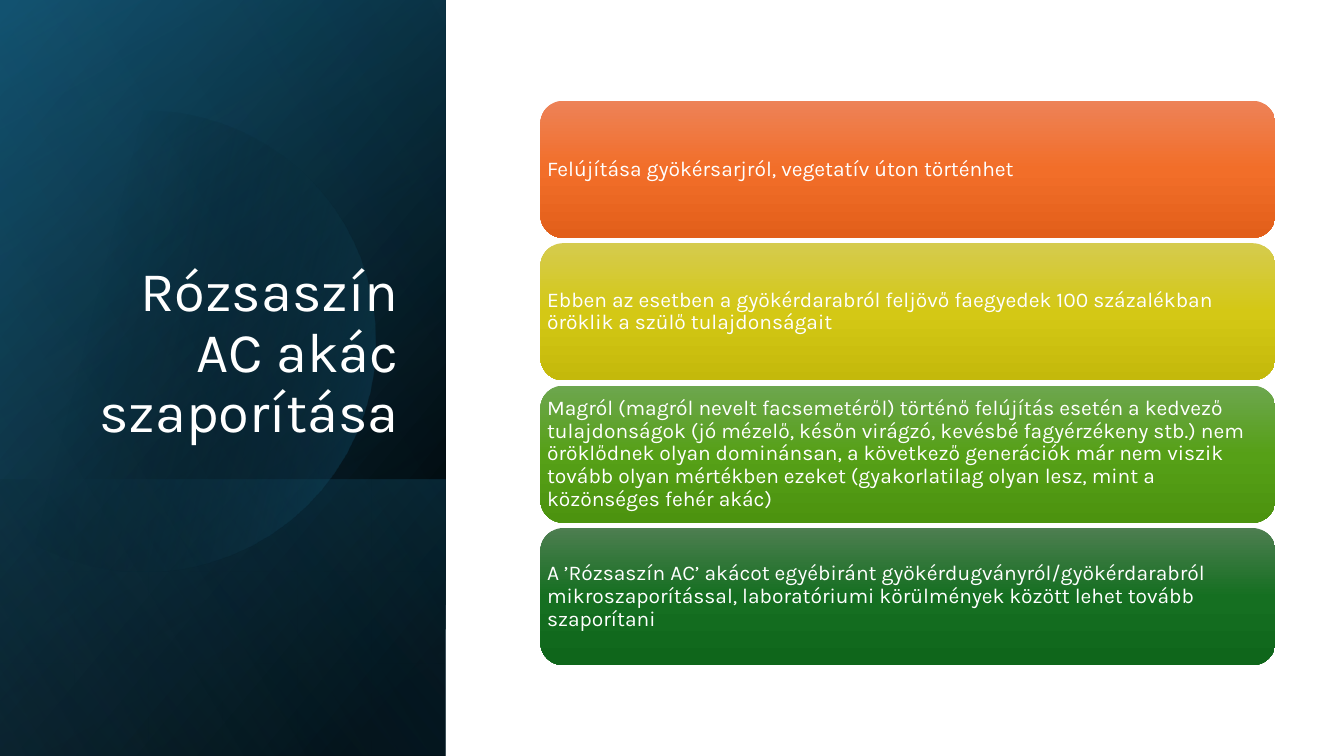
"""Builds a slide on propagating the pink black locust: a dark title panel and four cards."""
from lxml import etree
from pptx import Presentation
from pptx import util as u
from pptx.dml.color import RGBColor
from pptx.enum import shapes, text
from pptx.oxml.ns import qn

TITLE = "Rózsaszín AC akác szaporítása"
CARDS = [
    ("Felújítása gyökérsarjról, vegetatív úton történhet",
     ("ED8257", "F26E29", "E25F1A")),
    ("Ebben az esetben a gyökérdarabról feljövő faegyedek 100 százalékban öröklik a szülő "
     "tulajdonságait",
     ("D5CB4E", "D4C815", "C4B90B")),
    ("Magról (magról nevelt facsemetéről) történő felújítás esetén a kedvező tulajdonságok "
     "(jó mézelő, későn virágzó, kevésbé fagyérzékeny stb.) nem öröklődnek olyan dominánsan, "
     "a következő generációk már nem viszik tovább olyan mértékben ezeket (gyakorlatilag "
     "olyan lesz, mint a közönséges fehér akác)",
     ("6DA64E", "56A017", "4C930F")),
    ("A ’Rózsaszín AC’ akácot egyébiránt gyökérdugványról/gyökérdarabról "
     "mikroszaporítással, laboratóriumi körülmények között lehet tovább szaporítani",
     ("4D7E50", "156F21", "0F661B")),
]
CARD_LEFT, CARD_TOP, CARD_WIDTH, CARD_HEIGHT, CARD_PITCH = 5.36, 1, 7.29, 1.36, 1.413

FULL_PANEL = (-1.54, 1.54, 7.5, 4.42)
LOWER_PANEL = (0.84, 3.92, 2.74, 4.42)
PANELS_BELOW = [
    (FULL_PANEL, 50, [(8, "000000", 100), (100, "104862", 100)]),
    (FULL_PANEL, 30, [(0, "000000", 0), (99, "156082", 46)]),
    (LOWER_PANEL, 130, [(2, "156082", 29), (100, "000000", 30)]),
]
PANELS_ABOVE = [(FULL_PANEL, 120, [(0, "000000", 0), (99, "46B1E1", 11)])]

DISC_START = (1.49, 1.1)
DISC_CURVES = [
    ((2.46, 1.12), (3.35, 1.77), (3.63, 2.75)),
    ((3.98, 3.97), (3.28, 5.23), (2.07, 5.58)),
    ((1.31, 5.8), (0.53, 5.61), (-0.03, 5.14)),
    ((-0.03, 5.14), (0, 1.61), (0, 1.61)),
    ((0.23, 1.42), (0.5, 1.28), (0.8, 1.19)),
    ((1.03, 1.13), (1.26, 1.1), (1.49, 1.1)),
]
DISC_STOPS = [(29, "000000", 0), (100, "156082", 43)]


def color(value):
    return RGBColor.from_string(value)


def fill_gradient(shape, stops, angle):
    shape.shadow.inherit = False
    shape.line.fill.background()
    shape.fill.gradient()
    gradient = shape.fill._xPr.find(qn("a:gradFill"))
    for child in list(gradient):
        gradient.remove(child)
    stop_list = etree.SubElement(gradient, qn("a:gsLst"))
    for position, value, opacity in stops:
        stop = etree.SubElement(stop_list, qn("a:gs"), pos=str(position * 1000))
        tint = etree.SubElement(stop, qn("a:srgbClr"), val=value)
        if opacity < 100:
            etree.SubElement(tint, qn("a:alpha"), val=str(opacity * 1000))
    etree.SubElement(gradient, qn("a:lin"), ang=str(angle * 60000), scaled="0")
    gradient.set("rotWithShape", "1")


def write(shape, words, size, align, anchor, insets):
    frame = shape.text_frame
    frame.word_wrap = True
    frame.vertical_anchor = anchor
    frame.margin_left = frame.margin_right = u.Inches(insets[0])
    frame.margin_top = frame.margin_bottom = u.Inches(insets[1])
    para = frame.paragraphs[0]
    para.alignment = align
    para.line_spacing = 0.9
    span = para.add_run()
    span.text = words
    span.font.size = u.Pt(size)
    span.font.name = "Karla"
    span.font.color.rgb = color("FFFFFF")


def add_panels(page, panels):
    for place, angle, stops in panels:
        panel = page.shapes.add_shape(shapes.MSO_SHAPE.RECTANGLE, *map(u.Inches, place))
        panel.rotation = 90
        panel._element.spPr.find(qn("a:xfrm")).set("flipH", "1")
        fill_gradient(panel, stops, angle)


def curve_points(start, curves, steps=16):
    points = []
    for first, second, end in curves:
        for step in range(1, steps + 1):
            t = step / steps
            weights = ((1 - t) ** 3, 3 * t * (1 - t) ** 2, 3 * t * t * (1 - t), t ** 3)
            corners = (start, first, second, end)
            x, y = (sum(w * c[axis] for w, c in zip(weights, corners)) for axis in (0, 1))
            points.append((u.Inches(max(0, x)), u.Inches(y)))
        start = end
    return points


def add_disc(page):
    builder = page.shapes.build_freeform(*map(u.Inches, DISC_START))
    builder.add_line_segments(curve_points(DISC_START, DISC_CURVES), close=True)
    fill_gradient(builder.convert_to_shape(), DISC_STOPS, 14)


def add_cards(page):
    for index, (words, shades) in enumerate(CARDS):
        place = (CARD_LEFT, CARD_TOP + index * CARD_PITCH, CARD_WIDTH, CARD_HEIGHT)
        card = page.shapes.add_shape(shapes.MSO_SHAPE.ROUNDED_RECTANGLE, *map(u.Inches, place))
        fill_gradient(card, [(i * 50, shade, 100) for i, shade in enumerate(shades)], 90)
        write(card, words, 15, text.PP_ALIGN.LEFT, text.MSO_ANCHOR.MIDDLE, (0, 0))


def main():
    deck = Presentation()
    deck.slide_width, deck.slide_height = u.Inches(13.33), u.Inches(7.5)
    page = deck.slides.add_slide(deck.slide_layouts[6])
    add_panels(page, PANELS_BELOW)
    add_disc(page)
    add_panels(page, PANELS_ABOVE)
    title = page.shapes.add_textbox(*map(u.Inches, (0.64, 1.84, 3.41, 2.62)))
    write(title, TITLE, 40, text.PP_ALIGN.RIGHT, text.MSO_ANCHOR.BOTTOM, (0.1, 0.05))
    add_cards(page)
    deck.save("out.pptx")


if __name__ == "__main__":
    main()
